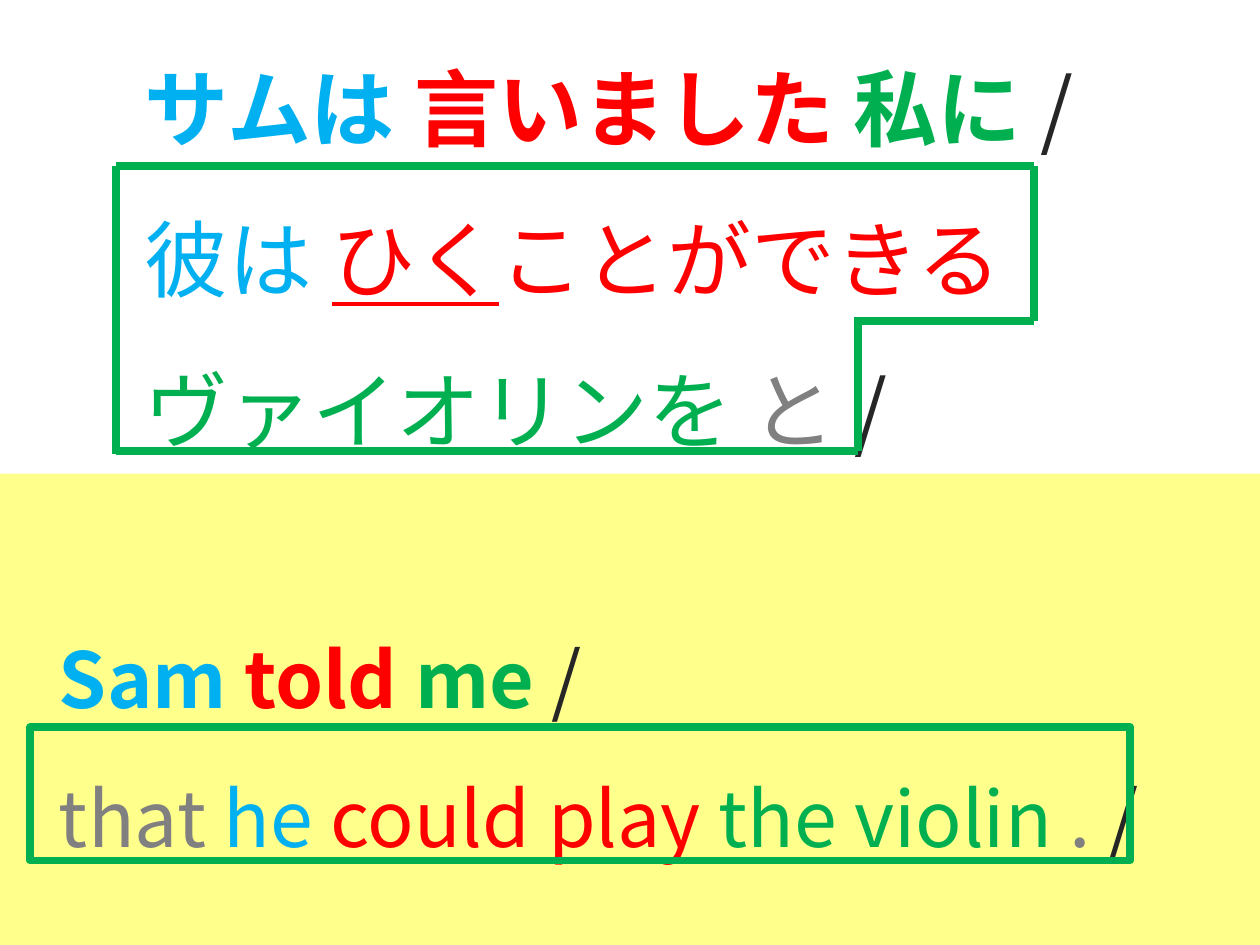
from lxml import etree
from pptx import Presentation
from pptx.dml.color import RGBColor as Rgb
from pptx.enum.shapes import MSO_CONNECTOR as Conn, MSO_SHAPE as Kind
from pptx.enum.text import MSO_AUTO_SIZE as Fit
from pptx.oxml.ns import qn
from pptx.util import Inches, Pt

FONT = "Noto Sans CJK JP"
BLUE = Rgb(0x00, 0xB0, 0xF0)
RED = Rgb(0xFF, 0x00, 0x00)
GREEN = Rgb(0x00, 0xB0, 0x50)
GRAY = Rgb(0x80, 0x80, 0x80)
DARK = Rgb(0x26, 0x26, 0x26)
ORANGE = Rgb(0xED, 0x7D, 0x31)
YELLOW = Rgb(0xFF, 0xFF, 0x8B)
BOLD = {"bold": True}
UNDER = {"underline": True}

JAPANESE = [
    [("サムは ", BLUE, BOLD), ("言いました ", RED, BOLD),
     ("私に ", GREEN, BOLD), ("/", DARK, {})],
    [("彼は ", BLUE, {}), ("ひく", RED, UNDER), ("ことができる", RED, {})],
    [("ヴァイオリンを", GREEN, {}), (" と ", GRAY, {}), ("/", DARK, {})],
]
ENGLISH = [
    [("Sam ", BLUE, BOLD), ("told ", RED, BOLD),
     ("me ", GREEN, BOLD), ("/", DARK, {})],
    [("that", GRAY, {}), (" he ", BLUE, {}), ("could ", RED, {}),
     ("play", RED, UNDER), (" ", ORANGE, {}), ("the violin ", GREEN, {}),
     (". ", GRAY, {}), ("/", DARK, {})],
]


def add_text(slide, box, rows, size):
    frame = slide.shapes.add_textbox(*map(Inches, box)).text_frame
    frame.word_wrap = True
    frame.auto_size = Fit.SHAPE_TO_FIT_TEXT
    for num, row in enumerate(rows):
        para = frame.add_paragraph() if num else frame.paragraphs[0]
        para.line_spacing = 1.5
        for text, color, style in row:
            run = para.add_run()
            run.text = text
            form = {"name": FONT, "size": Pt(size), "bold": False, **style}
            for key, value in form.items():
                setattr(run.font, key, value)
            run.font.color.rgb = color
            east = etree.SubElement(run.font._element, qn("a:ea"))
            east.set("typeface", FONT)


def add_rect(slide, box, fill=None, line=None):
    rect = slide.shapes.add_shape(Kind.RECTANGLE, *map(Inches, box))
    rect.shadow.inherit = False
    if fill is None:
        rect.fill.background()
    else:
        rect.fill.solid()
        rect.fill.fore_color.rgb = fill
    if line is None:
        rect.line.fill.background()
    else:
        rect.line.color.rgb = line
        rect.line.width = Pt(4.5)


def add_frame(slide, box, notch):
    left, top, width, height = box
    right, base = left + width, top + height
    inner, step = right - notch[0], base - notch[1]
    group = slide.shapes.add_group_shape()
    for ends in [
        (left, top, right, top),
        (left, base, inner, base),
        (inner, step, right, step),
        (left, top, left, base + 0.02),
        (right, top, right, step),
        (inner, step - 0.03, inner, base),
    ]:
        line = group.shapes.add_connector(Conn.STRAIGHT, *map(Inches, ends))
        line.line.color.rgb = GREEN
        line.line.width = Pt(4.5)
        etree.SubElement(line._element.spPr, qn("a:effectLst"))


def main():
    deck = Presentation()
    deck.slide_width, deck.slide_height = Inches(10), Inches(7.5)
    slide = deck.slides.add_slide(deck.slide_layouts[6])
    add_rect(slide, (0, 3.76, 10, 3.74), fill=YELLOW)
    add_text(slide, (0.37, 4.6, 9.63, 2.23), ENGLISH, 44)
    add_text(slide, (1.05, 0, 7.92, 3.64), JAPANESE, 48)
    add_rect(slide, (0.24, 5.77, 8.73, 1.06), line=GREEN)
    add_frame(slide, (0.92, 1.32, 7.29, 2.26), (1.4, 1.03))
    deck.save("out.pptx")


if __name__ == "__main__":
    main()
